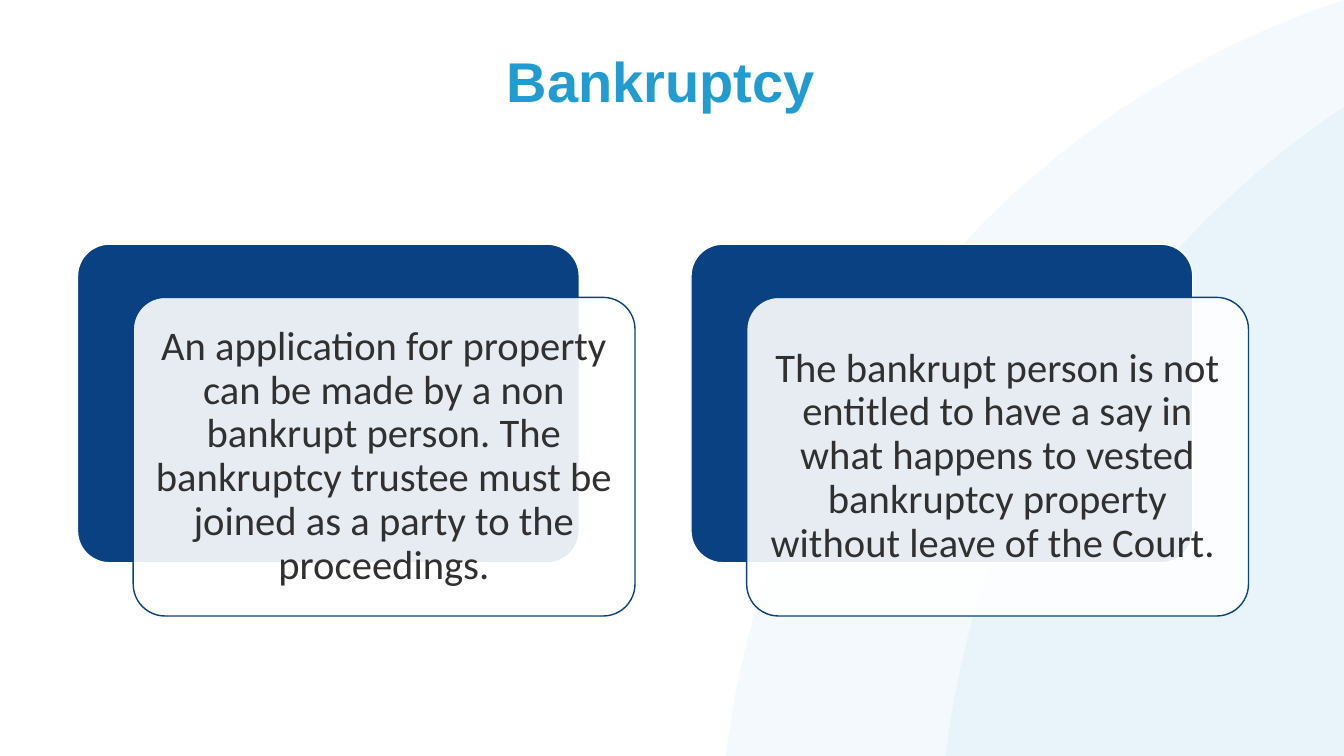
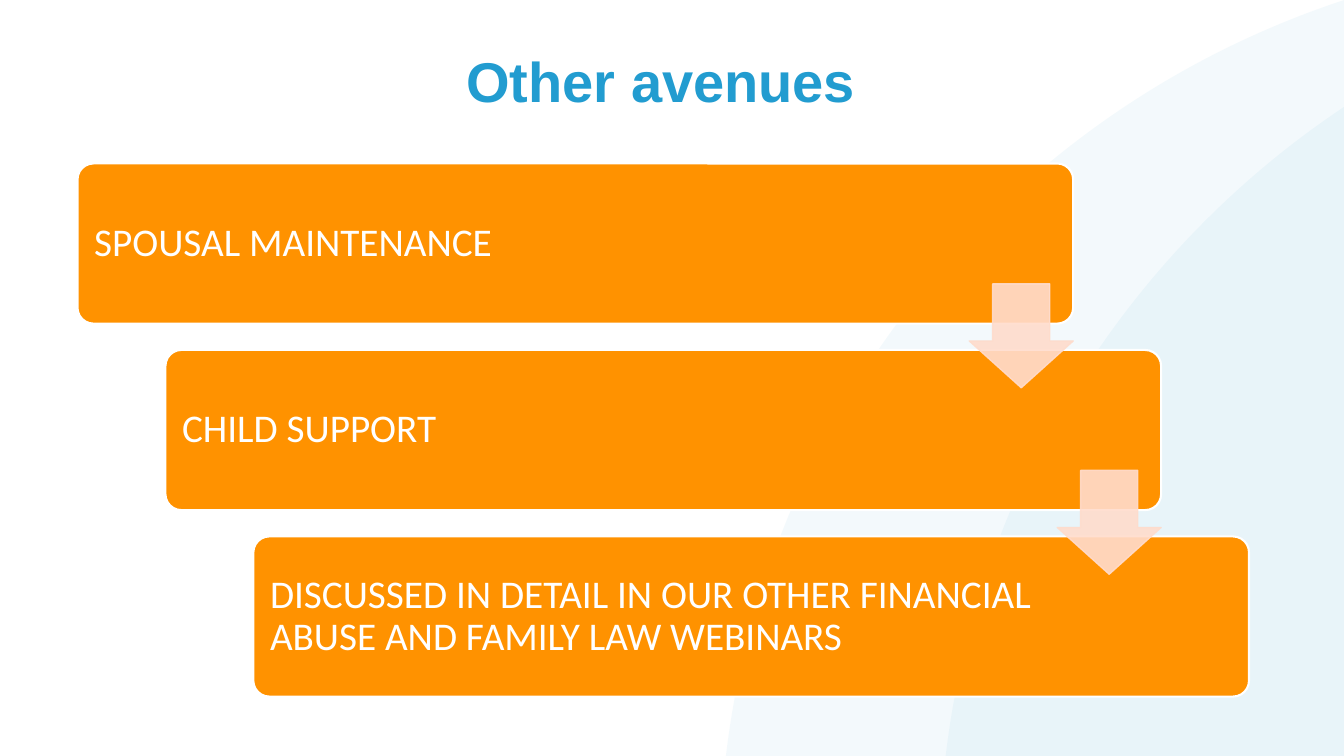
"""Build two legal-information slides: offset cards and a staircase of bars."""
from dataclasses import dataclass
from typing import Any, Optional

from lxml.etree import SubElement
from pptx import Presentation
from pptx.dml.color import RGBColor
from pptx.enum.shapes import MSO_SHAPE
from pptx.enum.text import MSO_ANCHOR, PP_ALIGN
from pptx.oxml.ns import qn
from pptx.util import Pt

SKY, NAVY, ORANGE = "229CD0", "094183", "FF9200"
PEACH, INK, WHITE = "FFDCCC", "303030", "FFFFFF"
LEFT = 55.4
TEXT_INSET = 8.6


@dataclass(frozen=True)
class Box:
    left: float
    top: float
    width: float
    height: float

    def moved(self, right: float, down: float) -> "Box":
        return Box(self.left + right, self.top + down, self.width, self.height)


@dataclass(frozen=True)
class Style:
    fill: str
    opacity: int = 100
    line: Optional[str] = None
    line_width: float = 1
    line_opacity: int = 100
    adjustments: tuple[float, ...] = ()


CIRCLE = Style(SKY, opacity=5)
CARD_BACK = Style(NAVY, line=WHITE, adjustments=(0.1,))
CARD_FRONT = Style(WHITE, opacity=90, line=NAVY, adjustments=(0.1,))
BAR = Style(ORANGE, line=WHITE, line_width=1.5, adjustments=(0.1,))
ARROW = Style(PEACH, opacity=90, line=PEACH, line_opacity=90, adjustments=(0.55, 0.45))

TITLE_BOX = Box(LEFT, 35.3, 836.6, 69.8)
CIRCLES = (Box(514, -32.4, 1297.4, 1297.4), Box(671, -32.4, 1297.4, 1297.4))
CARD_BOX = Box(LEFT, 174.4, 358.4, 227.6)
CARD_PITCH = 438.2
CARD_OFFSET = (39.8, 38)
BAR_BOX = Box(LEFT, 116.8, 711.2, 114.4)
BAR_STEP = (62.8, 133.2)
ARROW_SIZE = 74.2
ARROW_TOP = 202.8

CARDS = (
    "An application for property can be made by a non bankrupt person. "
    "The bankruptcy trustee must be joined as a party to the proceedings.",
    "The bankrupt person is not entitled to have a say in what happens to "
    "vested bankruptcy property without leave of the Court. ",
)
BARS = (
    "SPOUSAL MAINTENANCE",
    "CHILD SUPPORT",
    "DISCUSSED IN DETAIL IN OUR OTHER FINANCIAL ABUSE AND FAMILY LAW WEBINARS",
)


def paint(fill: Any, color: str, opacity: int = 100) -> None:
    fill.solid()
    fill.fore_color.rgb = RGBColor.from_string(color)
    if opacity < 100:
        color_element = fill._xPr.find(qn("a:solidFill"))[0]
        SubElement(color_element, qn("a:alpha")).set("val", str(opacity * 1000))


def add_box(slide: Any, kind: MSO_SHAPE, box: Box, style: Style) -> Any:
    shape = slide.shapes.add_shape(
        kind, Pt(box.left), Pt(box.top), Pt(box.width), Pt(box.height))
    shape.shadow.inherit = False
    for index, value in enumerate(style.adjustments):
        shape.adjustments[index] = value
    paint(shape.fill, style.fill, style.opacity)
    if style.line is None:
        shape.line.fill.background()
    else:
        paint(shape.line.fill, style.line, style.line_opacity)
        shape.line.width = Pt(style.line_width)
    return shape


def write(shape: Any, text: str, *, size: float, color: str, font: str = "Calibri",
          bold: bool = False, align: PP_ALIGN = PP_ALIGN.CENTER,
          anchor: MSO_ANCHOR = MSO_ANCHOR.MIDDLE, inset: float = TEXT_INSET,
          right_inset: Optional[float] = None) -> None:
    frame = shape.text_frame
    frame.word_wrap = True
    frame.vertical_anchor = anchor
    frame.margin_left = frame.margin_top = frame.margin_bottom = Pt(inset)
    frame.margin_right = Pt(inset if right_inset is None else right_inset)
    paragraph = frame.paragraphs[0]
    paragraph.alignment = align
    paragraph.line_spacing = 0.9
    run = paragraph.add_run()
    run.text = text
    run.font.name = font
    run.font.size = Pt(size)
    run.font.bold = bold
    run.font.color.rgb = RGBColor.from_string(color)


def add_titled_slide(presentation: Any, title: str) -> Any:
    slide = presentation.slides.add_slide(presentation.slide_layouts[6])
    for circle in CIRCLES:
        add_box(slide, MSO_SHAPE.OVAL, circle, CIRCLE)
    text_box = slide.shapes.add_textbox(
        Pt(TITLE_BOX.left), Pt(TITLE_BOX.top), Pt(TITLE_BOX.width), Pt(TITLE_BOX.height))
    write(text_box, title, size=40, color=SKY, font="Arial", bold=True,
          anchor=MSO_ANCHOR.TOP, inset=3.6, right_inset=7.2)
    return slide


def add_bankruptcy_slide(presentation: Any) -> None:
    slide = add_titled_slide(presentation, "Bankruptcy")
    for index, text in enumerate(CARDS):
        back = CARD_BOX.moved(index * CARD_PITCH, 0)
        add_box(slide, MSO_SHAPE.ROUNDED_RECTANGLE, back, CARD_BACK)
        front = add_box(slide, MSO_SHAPE.ROUNDED_RECTANGLE,
                        back.moved(*CARD_OFFSET), CARD_FRONT)
        write(front, text, size=29, color=INK)


def add_avenues_slide(presentation: Any) -> None:
    slide = add_titled_slide(presentation, "Other avenues")
    step_right, step_down = BAR_STEP
    for index, text in enumerate(BARS):
        bar = add_box(slide, MSO_SHAPE.ROUNDED_RECTANGLE,
                      BAR_BOX.moved(index * step_right, index * step_down), BAR)
        write(bar, text, size=28, color=WHITE, align=PP_ALIGN.LEFT, right_inset=146)
    first_arrow = Box(BAR_BOX.left + BAR_BOX.width - ARROW_SIZE, ARROW_TOP,
                      ARROW_SIZE, ARROW_SIZE)
    for index in range(len(BARS) - 1):
        add_box(slide, MSO_SHAPE.DOWN_ARROW,
                first_arrow.moved(index * step_right, index * step_down), ARROW)


def main() -> None:
    presentation = Presentation()
    presentation.slide_width = Pt(960)
    presentation.slide_height = Pt(540)
    add_bankruptcy_slide(presentation)
    add_avenues_slide(presentation)
    presentation.save("out.pptx")


if __name__ == "__main__":
    main()
